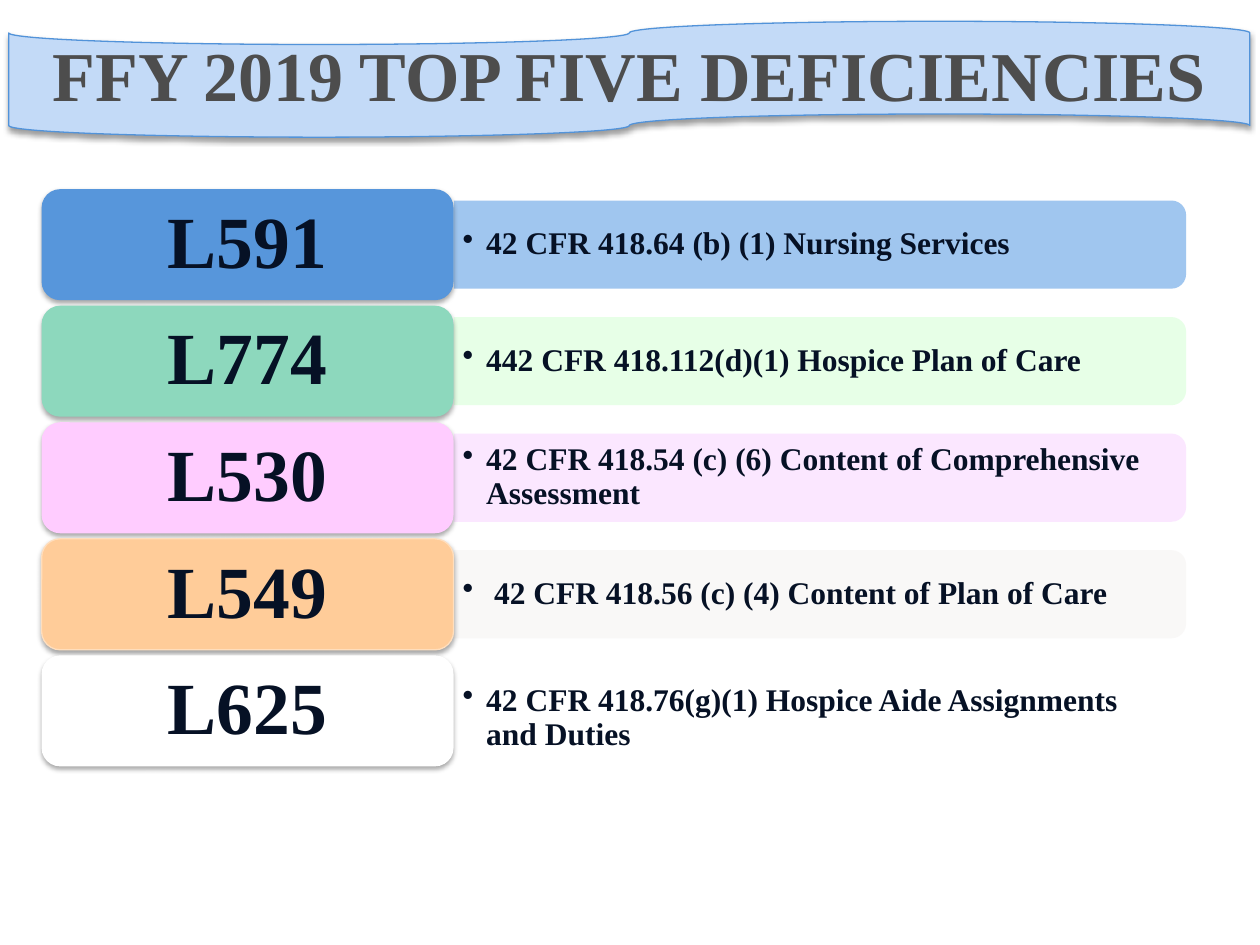
"""Build a slide listing the five most cited hospice deficiencies."""
import lxml.etree
import pptx
import pptx.dml.color
import pptx.enum.shapes
import pptx.enum.text
import pptx.oxml.ns
import pptx.util

Pt = pptx.util.Pt
RGBColor = pptx.dml.color.RGBColor
SHAPE = pptx.enum.shapes.MSO_SHAPE
ALIGN = pptx.enum.text.PP_ALIGN
qn = pptx.oxml.ns.qn

INK = RGBColor(0x06, 0x11, 0x25)
TITLE_GRAY = RGBColor(0x4D, 0x4D, 0x4D)
BANNER_FILL = RGBColor(0xC3, 0xDA, 0xF7)
BANNER_LINE = RGBColor(0x52, 0x93, 0xD9)
BLUE = RGBColor(0x57, 0x96, 0xDB)
PALE_BLUE = RGBColor(0x96, 0xC0, 0xEE)
GREEN = RGBColor(0x8D, 0xD8, 0xBD)
PALE_GREEN = RGBColor(0xE5, 0xFF, 0xE5)
PINK = RGBColor(0xFF, 0xCC, 0xFF)
PALE_PINK = RGBColor(0xFB, 0xE5, 0xFF)
ORANGE = RGBColor(0xFF, 0xCC, 0x99)
PALE_ORANGE = RGBColor(0xFF, 0xDE, 0xBD)
PALE_GRAY = RGBColor(0xF9, 0xF8, 0xF7)
WHITE = RGBColor(0xFF, 0xFF, 0xFF)

DEFICIENCIES = [
    ("L591", "42 CFR 418.64 (b) (1) Nursing Services", BLUE, PALE_BLUE, None, 0),
    ("L774", "442 CFR 418.112(d)(1) Hospice Plan of Care", GREEN, PALE_GREEN, None, 0),
    ("L530", "42 CFR 418.54 (c) (6) Content of Comprehensive Assessment",
     PINK, PALE_PINK, None, 0),
    ("L549", " 42 CFR 418.56 (c) (4) Content of Plan of Care",
     ORANGE, PALE_GRAY, PALE_ORANGE, 0),
    ("L625", "42 CFR 418.76(g)(1) Hospice Aide Assignments and Duties",
     WHITE, WHITE, None, 4),
]
FIRST_CENTER = 139.8
ROW_PITCH = 66.6


class DeficiencySlide:
    """Hold the text style and the slide, and draw its elements."""

    def __init__(self, slide, font="Times New Roman"):
        self.slide = slide
        self.font = font

    def fill_text(self, shape, text, size, color, align, insets):
        """Set one bold paragraph, vertically centred, in a shape."""
        frame = shape.text_frame
        frame.text = text
        frame.word_wrap = True
        frame.auto_size = pptx.enum.text.MSO_AUTO_SIZE.NONE
        frame.vertical_anchor = pptx.enum.text.MSO_ANCHOR.MIDDLE
        frame.margin_left = frame.margin_right = Pt(insets[0])
        frame.margin_top = frame.margin_bottom = Pt(insets[1])
        para = frame.paragraphs[0]
        para.alignment = align
        para.line_spacing = 0.9
        for span in para.runs:
            span.font.name = self.font
            span.font.size = Pt(size)
            span.font.bold = True
            span.font.color.rgb = color
        return para

    def panel(self, kind, left, top, width, height, fill, line=None):
        """Add a flat filled shape with an optional outline."""
        shape = self.slide.shapes.add_shape(kind, Pt(left), Pt(top), Pt(width), Pt(height))
        shape.shadow.inherit = False
        shape.fill.solid()
        shape.fill.fore_color.rgb = fill
        if line is None:
            shape.line.fill.background()
        else:
            shape.line.color.rgb = line
            shape.line.width = Pt(0.75)
        return shape

    def cast_shadow(self, shape, opacity):
        """Give a shape a soft shadow that falls straight down."""
        effects = shape._element.spPr.find(qn("a:effectLst"))
        shadow = lxml.etree.SubElement(
            effects, qn("a:outerShdw"), blurRad=str(Pt(3.1)), dist=str(Pt(1.8)),
            dir="5400000", algn="ctr", rotWithShape="0")
        black = lxml.etree.SubElement(shadow, qn("a:srgbClr"), val="000000")
        lxml.etree.SubElement(black, qn("a:alpha"), val=str(opacity * 1000))

    def title(self, text):
        """Place the title on a waving banner."""
        area = (5, 12.2, 709.2, 66.2)
        banner = self.panel(SHAPE.FLOWCHART_PUNCHED_TAPE, *area, BANNER_FILL, BANNER_LINE)
        self.cast_shadow(banner, 38)
        title = self.slide.shapes.title
        title.left, title.top, title.width, title.height = map(Pt, area)
        self.fill_text(title, text, 40, TITLE_GRAY, ALIGN.CENTER, (7.2, 3.6))
        banner._element.addnext(title._element)

    def label(self, text, center, fill, line):
        """Add a raised tag with a deficiency code."""
        tag = self.panel(SHAPE.ROUNDED_RECTANGLE, 23.8, center - 31.7, 235.4, 63.4, fill, line)
        self.cast_shadow(tag, 35)
        self.fill_text(tag, text, 42, INK, ALIGN.CENTER, (12, 6.5))

    def detail(self, text, center, fill):
        """Add a bar rounded on its right side with a bulleted regulation."""
        left, length, thickness = 259.4, 418.4, 50.4
        bar = self.panel(SHAPE.ROUND_2_SAME_RECTANGLE, left + (length - thickness) / 2,
                         center - length / 2, thickness, length, fill)
        bar.rotation = 90
        color = bar._element.spPr.find(qn("a:solidFill"))[0]
        lxml.etree.SubElement(color, qn("a:alpha"), val="90000")
        box = self.slide.shapes.add_textbox(Pt(left), Pt(center - 23), Pt(416), Pt(46))
        para = self.fill_text(box, text, 18, INK, ALIGN.LEFT, (5, 2.7))
        properties = para._p.get_or_add_pPr()
        properties.set("marL", str(Pt(13.5)))
        properties.set("indent", str(Pt(-13.5)))
        lxml.etree.SubElement(properties, qn("a:buChar"), char="•")


def main():
    """Build and save the deck."""
    deck = pptx.Presentation()
    deck.slide_width, deck.slide_height = Pt(720), Pt(540)
    page = DeficiencySlide(deck.slides.add_slide(deck.slide_layouts[5]))
    for row, (code, rule, fill, pale, line, drop) in enumerate(DEFICIENCIES):
        center = FIRST_CENTER + row * ROW_PITCH
        page.detail(rule, center + drop, pale)
        page.label(code, center, fill, line)
    page.title("FFY 2019 TOP FIVE DEFICIENCIES")
    deck.save("out.pptx")


if __name__ == "__main__":
    main()
